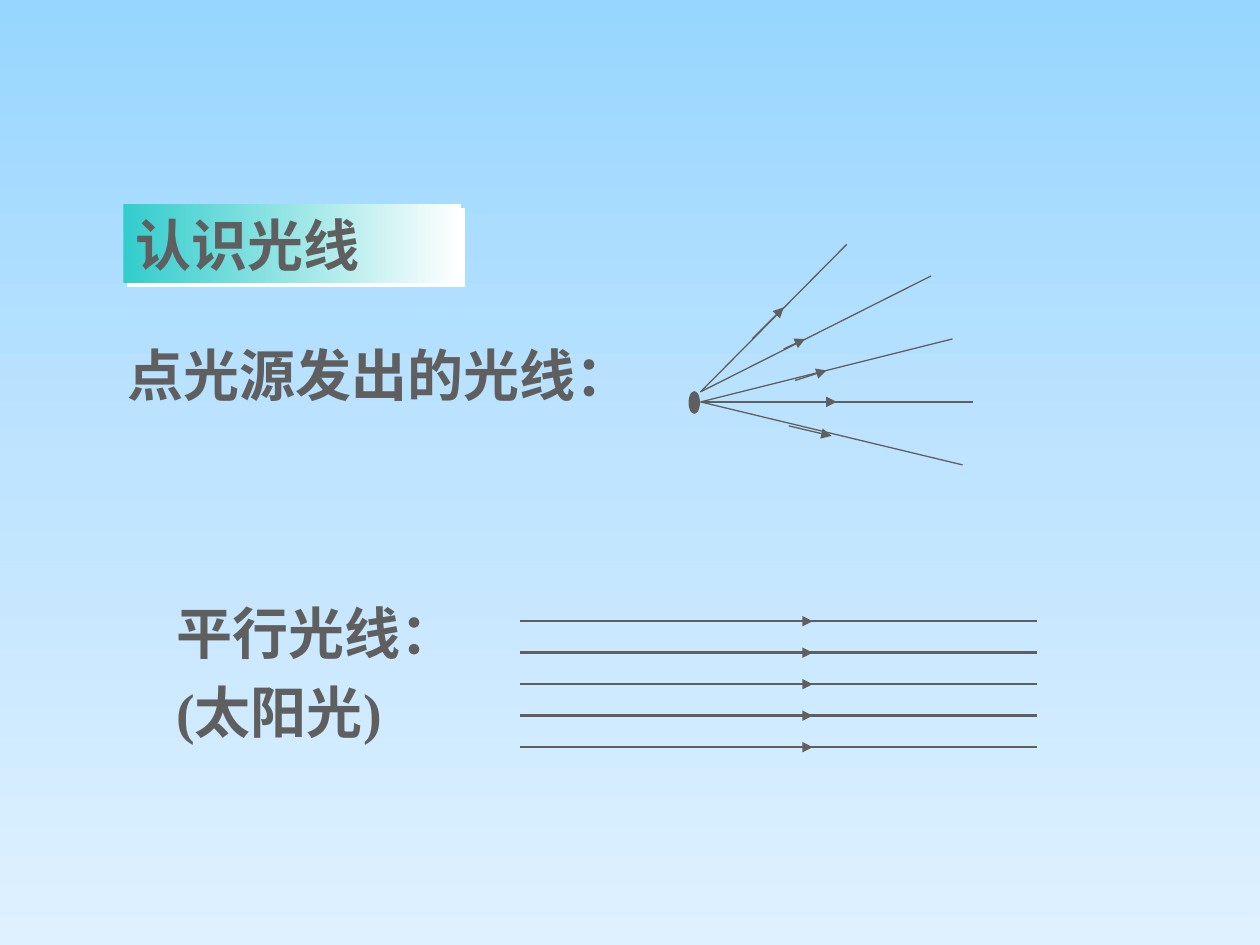
from copy import deepcopy

from lxml import etree
from pptx import Presentation
from pptx import util as u
from pptx.dml.color import RGBColor
from pptx.enum import shapes, text
from pptx.oxml.ns import qn

GREY = RGBColor(0x5F, 0x5F, 0x5F)
TEAL = RGBColor(0x33, 0xCC, 0xCC)
WHITE = RGBColor(0xFF, 0xFF, 0xFF)
SKY = [RGBColor(0x97, 0xD6, 0xFF), RGBColor(0xBF, 0xE4, 0xFF), RGBColor(0xDF, 0xF1, 0xFF)]
LATIN, CJK = "Times New Roman", "Noto Sans CJK SC"

COLS, ROWS = 100, 75
WIDTH, HEIGHT = u.Inches(10), u.Inches(7.5)

# Each ray: start and end of the line, then start and end of its arrow
RAYS = [
    ((55.6, 31.1), (67.2, 19.4), (59.7, 26.9), (62.2, 24.4)),
    ((55.6, 31.1), (73.9, 21.9), (62.2, 27.7), (63.9, 26.9)),
    ((55.6, 31.9), (77.2, 31.9), (64.7, 31.9), (66.4, 31.9)),
    ((55.6, 31.9), (76.4, 36.9), (62.6, 33.8), (66, 34.6)),
    ((55.6, 31.9), (75.6, 26.9), (63.1, 30.2), (65.6, 29.4)),
]


def at(col, row):
    """Turn a grid position or size into slide lengths."""
    return int(WIDTH * col / COLS), int(HEIGHT * row / ROWS)


def fill_gradient(fill, element, colors, angle):
    """Fill with evenly spaced colours; element is the XML that holds the fill."""
    fill.gradient()
    fill.gradient_angle = angle
    stops = next(element.iter(qn("a:gsLst")))
    while len(stops) < len(colors):
        stops.append(deepcopy(stops[-1]))
    for i, (stop, color) in enumerate(zip(fill.gradient_stops, colors)):
        stop.position = i / (len(colors) - 1)
        stop.color.rgb = color


def write(sp, content, latin=LATIN, size=32, color=GREY, bold=True):
    tf = sp.text_frame
    tf.word_wrap = True
    tf.auto_size = text.MSO_AUTO_SIZE.SHAPE_TO_FIT_TEXT
    tf.vertical_anchor = text.MSO_ANCHOR.TOP
    p = tf.paragraphs[0]
    p.alignment = text.PP_ALIGN.LEFT
    r = p.add_run()
    r.text = content
    r.font.name, r.font.size, r.font.bold = latin, u.Pt(size), bold
    r.font.color.rgb = color
    etree.SubElement(r.font._element, qn("a:ea"), typeface=CJK)


def add_label(s, content, col, row, cols):
    write(s.shapes.add_textbox(*at(col, row), *at(cols, 6.3)), content)


def add_heading(s, content):
    sp = s.shapes.add_shape(shapes.MSO_SHAPE.RECTANGLE, *at(9.8, 16.2), *at(26.8, 6.3))
    sp.line.fill.background()
    fill_gradient(sp.fill, sp._element, [TEAL, WHITE], 0)
    sp.shadow.inherit = False
    effects = sp._element.spPr.find(qn("a:effectLst"))
    shadow = etree.SubElement(effects, qn("a:outerShdw"), dist=str(u.Pt(2.8)),
                              dir="2700000", algn="ctr", rotWithShape="0")
    etree.SubElement(shadow, qn("a:srgbClr"), val=str(WHITE))
    write(sp, content, latin=CJK)


def add_line(group, start, end, width, arrow=False):
    line = group.shapes.add_connector(shapes.MSO_CONNECTOR.STRAIGHT, *at(*start), *at(*end))
    line.line.color.rgb = GREY
    line.line.width = u.Pt(width)
    if arrow:
        etree.SubElement(line.line._get_or_add_ln(), qn("a:tailEnd"), type="triangle")
    etree.SubElement(line._element.spPr, qn("a:effectLst"))


def add_ray(group, start, end, arrow_start, arrow_end, width):
    add_line(group, start, end, width)
    add_line(group, arrow_start, arrow_end, width, arrow=True)


def add_point_source(s):
    group = s.shapes.add_group_shape()
    source = group.shapes.add_shape(shapes.MSO_SHAPE.OVAL, *at(54.7, 31.1), *at(0.8, 1.7))
    source.shadow.inherit = False
    source.fill.solid()
    source.fill.fore_color.rgb = source.line.color.rgb = GREY
    source.line.width = u.Pt(0.75)
    for ray in RAYS:
        add_ray(group, *ray, width=0.75)


def add_parallel_rays(s, top=49.3, gap=2.5, count=5):
    group = s.shapes.add_group_shape()
    for i in range(count):
        row = top + i * gap
        add_ray(group, *[(col, row) for col in (41.3, 82.3, 59.1, 64.5)], width=1.5)


def main():
    prs = Presentation()
    prs.slide_width, prs.slide_height = WIDTH, HEIGHT
    s = prs.slides.add_slide(prs.slide_layouts[6])
    fill_gradient(s.background.fill, s._element, SKY, 270)
    add_label(s, "点光源发出的光线：", 9.1, 26.5, 42.2)
    add_point_source(s)
    add_label(s, "平行光线：", 13, 47, 24.3)
    add_label(s, "(太阳光)", 13, 53.3, 18.4)
    add_parallel_rays(s)
    add_heading(s, "认识光线")
    prs.save("out.pptx")


if __name__ == "__main__":
    main()
